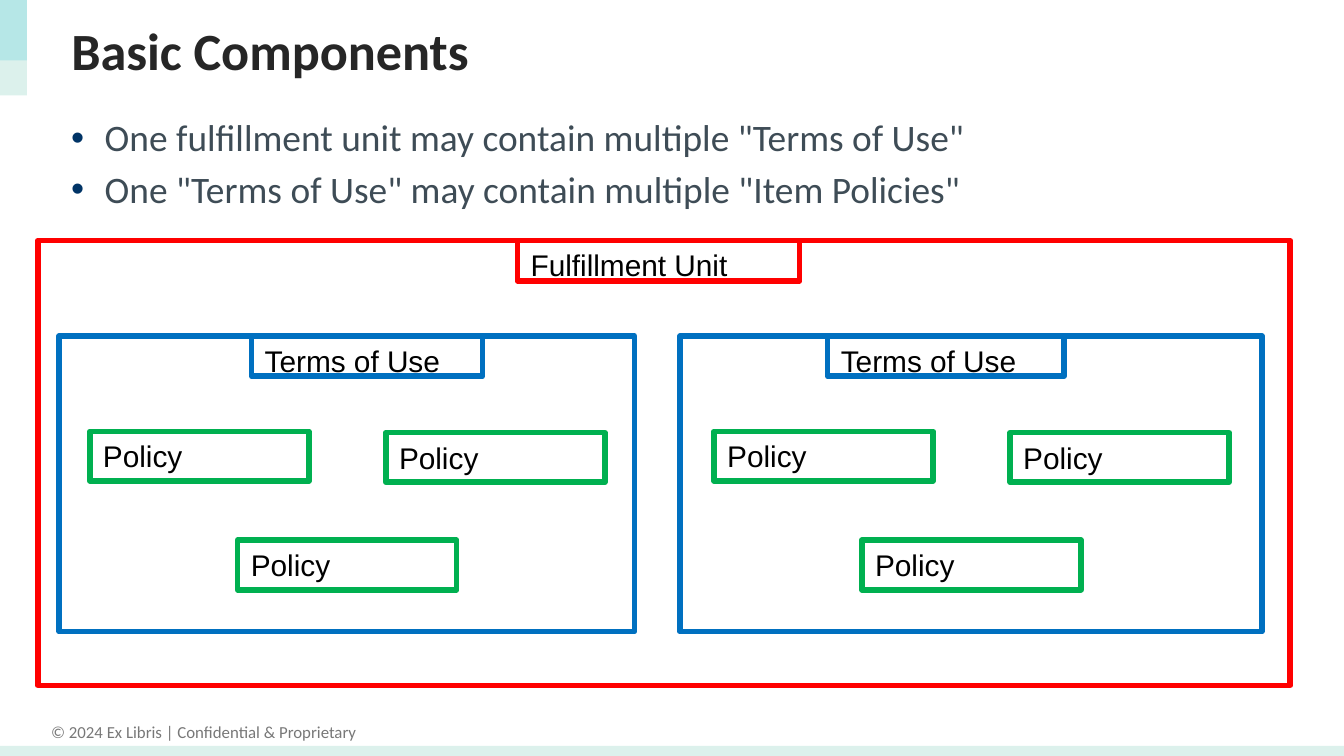
from lxml import etree
from pptx import Presentation
from pptx.dml.color import RGBColor
from pptx.enum.shapes import MSO_SHAPE
from pptx.enum.text import MSO_ANCHOR, MSO_AUTO_SIZE, PP_ALIGN
from pptx.oxml.ns import qn
from pptx.util import Pt

RECT = MSO_SHAPE.RECTANGLE
TOP, MIDDLE = MSO_ANCHOR.TOP, MSO_ANCHOR.MIDDLE
LEFT, CENTER = PP_ALIGN.LEFT, PP_ALIGN.CENTER
NO_AUTOFIT, FIT_SHAPE = MSO_AUTO_SIZE.NONE, MSO_AUTO_SIZE.SHAPE_TO_FIT_TEXT

COLORS = {
    "title": "262626", "body": "3E4C56", "bullet": "003466",
    "footer": "787878", "label": "000000", "mint": "DCF1EC", "aqua": "50CFDA",
    "unit": "FF0000", "terms": "0070C0", "policy": "00B050",
}
BULLETS = [
    'One fulfillment unit may contain multiple "Terms of Use"',
    'One "Terms of Use" may contain multiple "Item Policies"',
]
TAB_H = 21.6
POLICY_W, POLICY_H = 117.4, 26.6
# Policy offsets: left from the frame's centre, top from the frame's top
POLICY_OFFSETS = [(20.9, 51.8), (-137.7, 51.1), (-58.5, 109.4)]


def rgb(name):
    return RGBColor.from_string(COLORS[name])


def style_font(p, font, size, color, bold=False):
    for r in p.runs:
        r.font.name, r.font.size, r.font.bold = font, Pt(size), bold
        r.font.color.rgb = rgb(color)


def add_block(slide, box, color, alpha=None):
    sp = slide.shapes.add_shape(RECT, *map(Pt, box))
    sp.shadow.inherit = False
    sp.fill.solid()
    sp.fill.fore_color.rgb = rgb(color)
    sp.line.fill.background()
    if alpha is not None:
        clr = sp.fill._xPr.find(qn("a:solidFill"))[0]
        etree.SubElement(clr, qn("a:alpha"), val=str(alpha * 1000))


def add_frame(slide, box, color, text=""):
    sp = slide.shapes.add_shape(RECT, *map(Pt, box))
    sp.shadow.inherit = False
    sp.fill.background()
    sp.line.color.rgb = rgb(color)
    sp.line.width = Pt(3)
    if text:
        tf = sp.text_frame
        tf.text = text
        tf.vertical_anchor = TOP
        p = tf.paragraphs[0]
        p.alignment = LEFT
        style_font(p, "Arial", 16, "label")


def add_decoration(slide, width, height):
    # Footer text
    sp = slide.shapes.add_textbox(Pt(19.4), Pt(383), Pt(179.3), Pt(18))
    tf = sp.text_frame
    tf.word_wrap = False
    tf.auto_size = FIT_SHAPE
    tf.text = "© 2024 Ex Libris | Confidential & Proprietary"
    p = tf.paragraphs[0]
    p.alignment = CENTER
    style_font(p, "Calibri", 9, "footer")

    # Bottom strip and corner blocks
    add_block(slide, (0, height - 5.4, width, 5.4), "mint")
    add_block(slide, (0, 0, 14.4, 51.1), "mint")
    add_block(slide, (0, 0, 14.4, 32.4), "aqua", alpha=27)


def place_title(slide, box):
    sp = slide.shapes.title
    sp.left, sp.top, sp.width, sp.height = map(Pt, box)
    tf = sp.text_frame
    tf.text = "Basic Components"
    tf.vertical_anchor = MIDDLE
    tf.auto_size = NO_AUTOFIT
    p = tf.paragraphs[0]
    p.alignment = LEFT
    p.line_spacing = 0.9
    style_font(p, "Calibri", 28, "title", bold=True)


def add_bullets(slide, box):
    tf = slide.shapes.add_textbox(*map(Pt, box)).text_frame
    tf.word_wrap = True
    tf.text = "\n".join(BULLETS)
    for i, p in enumerate(tf.paragraphs):
        p.line_spacing = 0.9
        p.space_before = Pt(6 if i else 0)
        pPr = p._p.get_or_add_pPr()
        pPr.set("marL", str(Pt(18)))
        pPr.set("indent", str(-Pt(18)))
        clr = etree.SubElement(pPr, qn("a:buClr"))
        etree.SubElement(clr, qn("a:srgbClr"), val=COLORS["bullet"])
        etree.SubElement(pPr, qn("a:buFont"), typeface="Arial")
        etree.SubElement(pPr, qn("a:buChar"), char="•")
        style_font(p, "Calibri", 20, "body")


def add_terms(slide, box, tab_x, tab_w):
    x, y, w, _ = box
    add_frame(slide, box, "terms")
    add_frame(slide, (tab_x, y, tab_w, TAB_H), "terms", "Terms of Use")
    for dx, dy in POLICY_OFFSETS:
        policy_box = (x + w / 2 + dx, y + dy, POLICY_W, POLICY_H)
        add_frame(slide, policy_box, "policy", "Policy")


def add_unit(slide, box):
    x, y, _, _ = box
    add_frame(slide, box, "unit")
    add_frame(slide, (x + 257, y, 151.2, TAB_H), "unit", "Fulfillment Unit")
    terms_y = y + 51.1
    add_terms(slide, (x + 11.5, terms_y, 308.2, 158.4), x + 114.5, 123.8)
    add_terms(slide, (x + 344.1, terms_y, 311.8, 158.4), x + 423.2, 126.7)


def main():
    width, height = 720, 405
    prs = Presentation()
    prs.slide_width, prs.slide_height = Pt(width), Pt(height)
    slide = prs.slides.add_slide(prs.slide_layouts[5])
    add_decoration(slide, width, height)
    place_title(slide, (31, 5.8, 663, 45.4))
    add_bullets(slide, (31, 60.5, 663, 56.9))
    add_unit(slide, (20.2, 128.9, 671, 238.3))
    prs.save("out.pptx")


if __name__ == "__main__":
    main()
